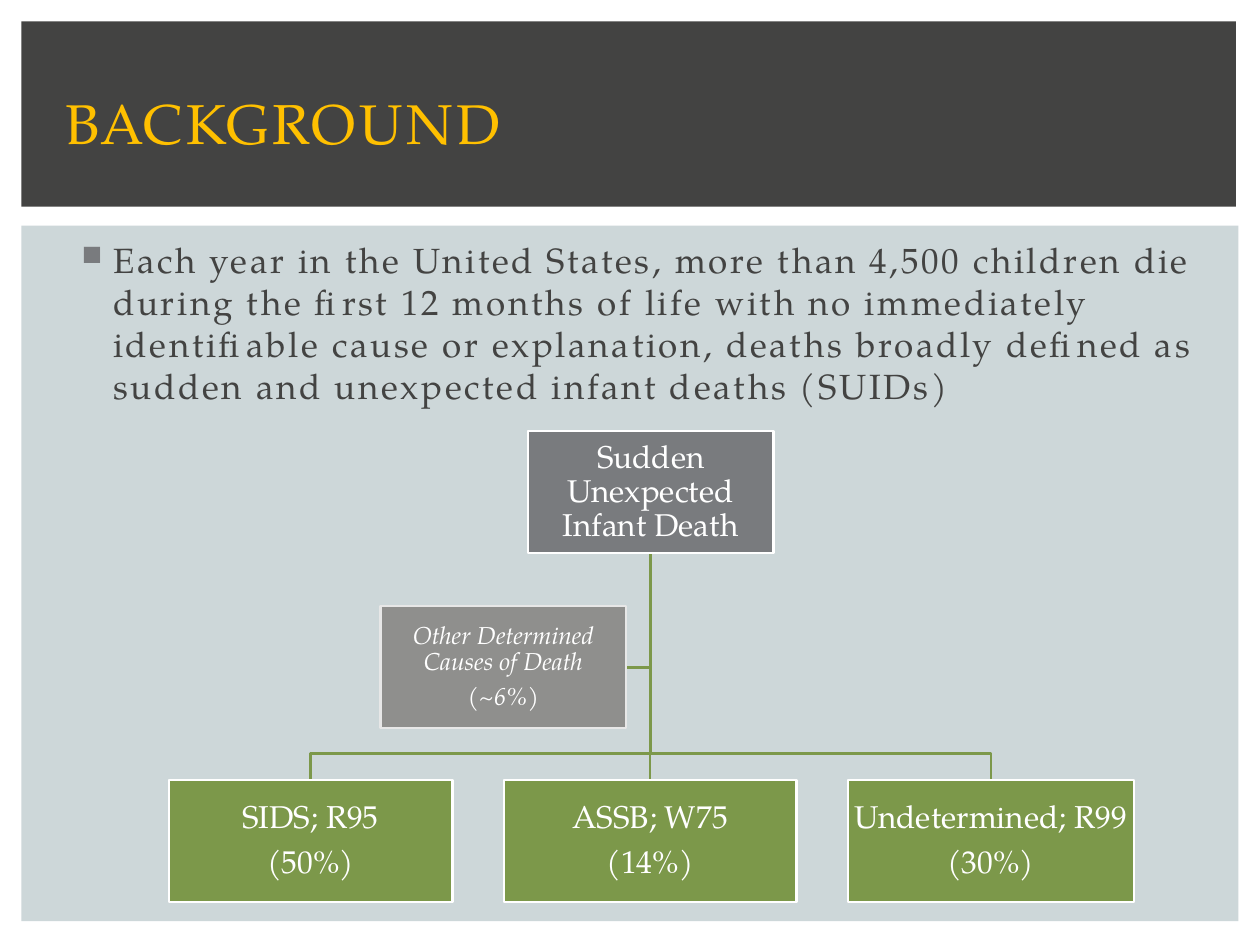
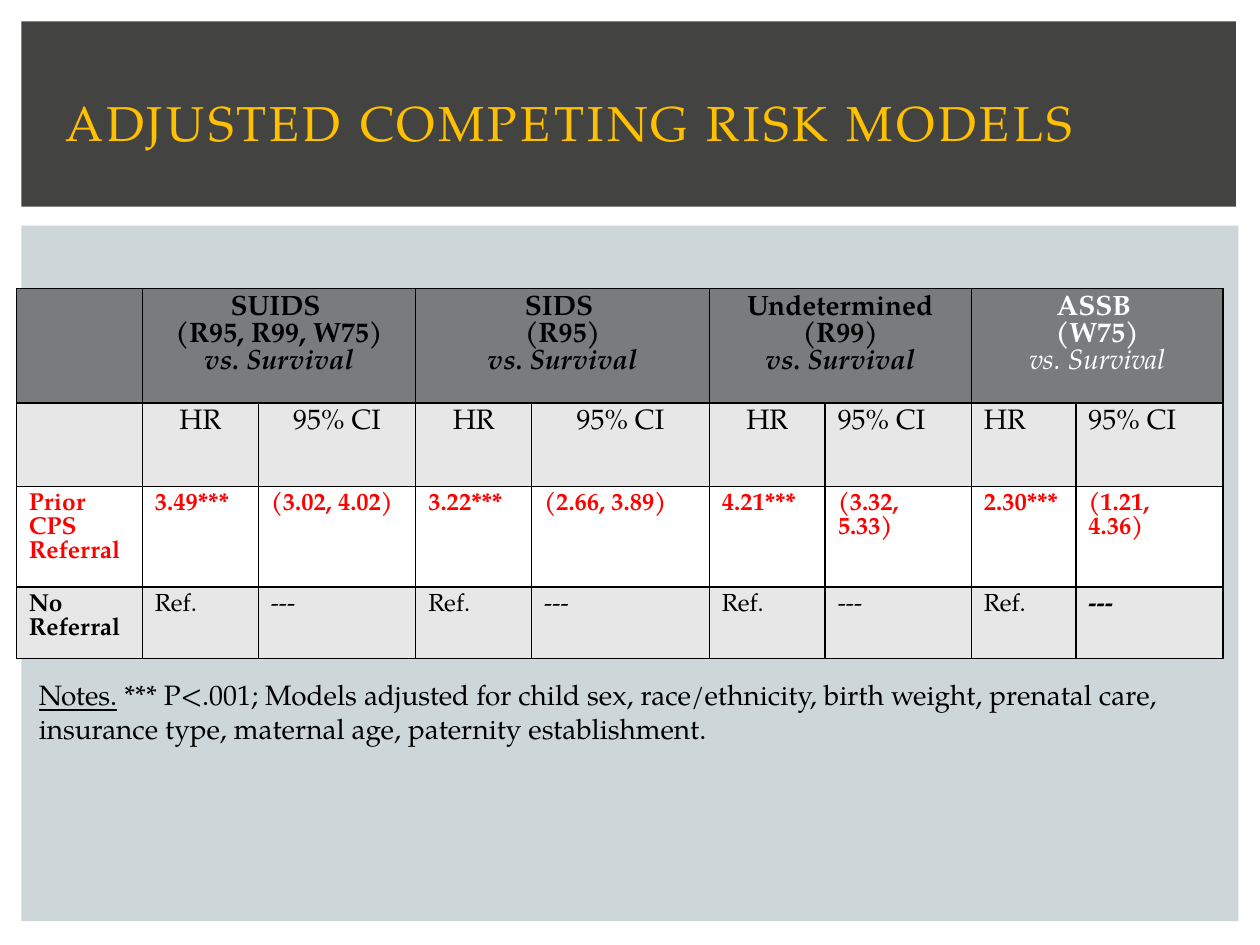
from dataclasses import dataclass, field

from lxml import etree
from pptx import Presentation
from pptx import util as u
from pptx.dml.color import RGBColor
from pptx.enum import shapes, text
from pptx.oxml.ns import qn

FONT = "TeX Gyre Pagella"
COLORS = {
    "panel": "CDD7D9", "band": "434342", "title": "FFC000", "body": "434342",
    "gray": "797B7E", "soft_gray": "8F8F8D", "pale": "E7E7E7",
    "green": "7C984A", "white": "FFFFFF", "black": "000000", "red": "FF0000",
}
CENTER = text.PP_ALIGN.CENTER
MIDDLE = text.MSO_ANCHOR.MIDDLE


@dataclass
class Style:
    size: float
    color: str = "black"
    spacing: float = 0
    flags: dict = field(default_factory=dict)


@dataclass
class Box:
    left: float
    top: float
    width: float
    lines: list[str]
    fill: str
    line: str = "white"
    style: Style = field(default_factory=lambda: Style(18, "white"))
    height: float = 0.97

    @property
    def mid_x(self) -> float:
        return self.left + self.width / 2


def rgb(name: str) -> RGBColor:
    return RGBColor.from_string(COLORS[name])


def apply(obj, values: dict) -> None:
    for name, value in values.items():
        setattr(obj, name, value)


def add_run(p, words: str, style: Style) -> None:
    r = p.add_run()
    r.text = words
    apply(r.font, {"name": FONT, "size": u.Pt(style.size), **style.flags})
    r.font.color.rgb = rgb(style.color)
    if style.spacing:
        r.font._element.set("spc", str(int(style.spacing * 100)))


def add_lines(tf, lines: list[tuple[str, Style]], **para) -> None:
    for i, (words, style) in enumerate(lines):
        p = tf.add_paragraph() if i else tf.paragraphs[0]
        apply(p, para)
        add_run(p, words, style)


def add_rect(slide, at: tuple, fill: str, line: str | None = None):
    sp = slide.shapes.add_shape(shapes.MSO_SHAPE.RECTANGLE, *map(u.Inches, at))
    sp.shadow.inherit = False
    sp.fill.solid()
    sp.fill.fore_color.rgb = rgb(fill)
    if line:
        sp.line.color.rgb = rgb(line)
        sp.line.width = u.Pt(1.5)
    else:
        sp.line.fill.background()
    return sp


def add_text(slide, at: tuple, **frame):
    tf = slide.shapes.add_textbox(*map(u.Inches, at)).text_frame
    apply(tf, {"word_wrap": True, **frame})
    return tf


def add_slide(prs, title: str, size: float):
    """Blank slide with the shared panel, dark band and title."""
    s = prs.slides.add_slide(prs.slide_layouts[6])
    add_rect(s, (0.17, 1.79, 9.66, 5.52), "panel")
    add_rect(s, (0.17, 0.17, 9.64, 1.47), "band")
    tf = add_text(s, (0.42, 0.39, 9.17, 1.15), vertical_anchor=MIDDLE)
    add_lines(tf, [(title, Style(size, "title", 2))])
    return s


# Organisation chart
def add_box(slide, box: Box) -> None:
    sp = add_rect(slide, (box.left, box.top, box.width, box.height), box.fill, box.line)
    tf = sp.text_frame
    margins = ("margin_left", "margin_right", "margin_top", "margin_bottom")
    apply(tf, {"word_wrap": True, "vertical_anchor": MIDDLE,
               **dict.fromkeys(margins, u.Inches(0.01))})
    add_lines(tf, [(line, box.style) for line in box.lines], alignment=CENTER,
              line_spacing=0.9, space_after=u.Pt(box.style.size * 0.35))


def add_branch(slide, points: list[tuple[float, float]]) -> None:
    start, *rest = [(u.Inches(x), u.Inches(y)) for x, y in points]
    fb = slide.shapes.build_freeform(*start)
    fb.add_line_segments(rest, close=False)
    sp = fb.convert_to_shape()
    sp.shadow.inherit = False
    sp.fill.background()
    sp.line.color.rgb = rgb("green")
    sp.line.width = u.Pt(1.5)


def background_slide(prs) -> None:
    s = add_slide(prs, "BACKGROUND", 32)

    # Bulleted statement
    tf = add_text(s, (0.5, 1.84, 9.17, 2.33))
    add_lines(tf, [(
        "Each year in the United States, more than 4,500 children die during the "
        "first 12 months of life with no immediately identifiable cause or "
        "explanation, deaths broadly defined as sudden and unexpected infant "
        "deaths (SUIDs)", Style(20, "body", 1.5))], space_before=u.Pt(4))
    ppr = tf.paragraphs[0]._p.get_or_add_pPr()
    ppr.set("marL", str(u.Inches(0.3)))
    ppr.set("indent", str(u.Inches(-0.25)))
    clr = etree.SubElement(ppr, qn("a:buClr"))
    etree.SubElement(clr, qn("a:srgbClr"), val=COLORS["gray"])
    etree.SubElement(ppr, qn("a:buSzPct"), val="80000")
    etree.SubElement(ppr, qn("a:buChar"), char="■")

    # Boxes and the branches behind them
    root = Box(4.19, 3.42, 1.95, ["Sudden Unexpected Infant Death"], "gray")
    other = Box(3.02, 4.81, 1.95, ["Other Determined Causes of Death", "(~6%)"],
                "soft_gray", "pale", Style(14, "white", flags={"italic": True}))
    causes = [Box(left, 6.19, width, lines, "green") for left, width, lines in (
        (1.34, 2.25, ["SIDS; R95", "(50%)"]),
        (4.0, 2.32, ["ASSB; W75", "(14%)"]),
        (6.73, 2.27, ["Undetermined; R99", "(30%)"]))]
    x, y = root.mid_x, root.top + root.height
    side_y, split_y = other.top + other.height / 2, 5.98
    add_branch(s, [(x, y), (x, side_y), (other.left + other.width, side_y)])
    for cause in causes:
        add_branch(s, [(x, y), (x, split_y), (cause.mid_x, split_y),
                       (cause.mid_x, cause.top)])
    for box in (root, *causes, other):
        add_box(s, box)


# Results table
def format_cell(cell, fill: str) -> None:
    tcpr = cell._tc.get_or_add_tcPr()
    for side in ("a:lnL", "a:lnR", "a:lnT", "a:lnB"):
        ln = etree.SubElement(tcpr, qn(side), w=str(u.Pt(1)))
        solid = etree.SubElement(ln, qn("a:solidFill"))
        etree.SubElement(solid, qn("a:srgbClr"), val=COLORS["black"])
    cell.fill.solid()
    cell.fill.fore_color.rgb = rgb(fill)


def fill_cell(cell, lines: list[tuple[str, Style]], center: bool = False) -> None:
    add_lines(cell.text_frame, lines, alignment=CENTER if center else None)


def models_slide(prs) -> None:
    s = add_slide(prs, "ADJUSTED COMPETING RISK MODELS", 28)
    widths = [1, 0.92, 1.25, 0.92, 1.41, 0.92, 1.16, 0.83, 1.17]
    heights = [0.91, 0.66, 0.8, 0.49]
    fills = ["gray", "pale", "white", "pale"]
    tbl = s.shapes.add_table(len(heights), len(widths), *map(
        u.Inches, (0.13, 2.29, sum(widths), sum(heights)))).table
    for col, width in zip(tbl.columns, widths):
        col.width = u.Inches(width)
    for i, (height, fill) in enumerate(zip(heights, fills)):
        tbl.rows[i].height = u.Inches(height)
        for cell in tbl.rows[i].cells:
            format_cell(cell, fill)

    # Outcome headings, each over a pair of columns
    outcomes = [("SUIDS ", "(R95, R99, W75)"), ("SIDS ", "(R95)"),
                ("Undetermined", "(R99)"), ("ASSB ", "(W75)")]
    for k, (name, codes) in enumerate(outcomes):
        last = k == len(outcomes) - 1
        color = "white" if last else "black"
        bold = Style(16, color, flags={"bold": True})
        versus = Style(16, color, flags={"bold": not last, "italic": True})
        head = tbl.cell(0, 2 * k + 1)
        head.merge(tbl.cell(0, 2 * k + 2))
        fill_cell(head, [(name, bold), (codes, bold), ("vs. Survival", versus)], True)

    # Measures and estimates
    rows = [
        ["", *["HR", "95% CI"] * 4],
        ["Prior CPS Referral", "3.49***", "(3.02, 4.02)", "3.22***", "(2.66, 3.89)",
         "4.21***", "(3.32, 5.33)", "2.30***", "(1.21, 4.36)"],
        ["No Referral", *["Ref.", "---"] * 4],
    ]
    strong = Style(14, flags={"bold": True})
    styles = [Style(16), Style(14, "red", flags={"bold": True}), Style(14)]
    for i, (row, style) in enumerate(zip(rows, styles), 1):
        for j, words in enumerate(row):
            if words:
                edge = i == 3 and j in (0, len(row) - 1)
                fill_cell(tbl.cell(i, j), [(words, strong if edge else style)],
                          i == 1 and j < 6)

    # Notes below the table
    tf = add_text(s, (0.21, 5.33, 9.5, 0.64))
    add_lines(tf, [("Notes.", Style(16, flags={"underline": True}))])
    add_run(tf.paragraphs[0], " *** P<.001; Models adjusted for child sex, "
            "race/ethnicity, birth weight, prenatal care, insurance type, "
            "maternal age, paternity establishment.", Style(16))


def main() -> None:
    prs = Presentation()
    prs.slide_width, prs.slide_height = u.Inches(10), u.Inches(7.5)
    background_slide(prs)
    models_slide(prs)
    prs.save("out.pptx")


if __name__ == "__main__":
    main()
